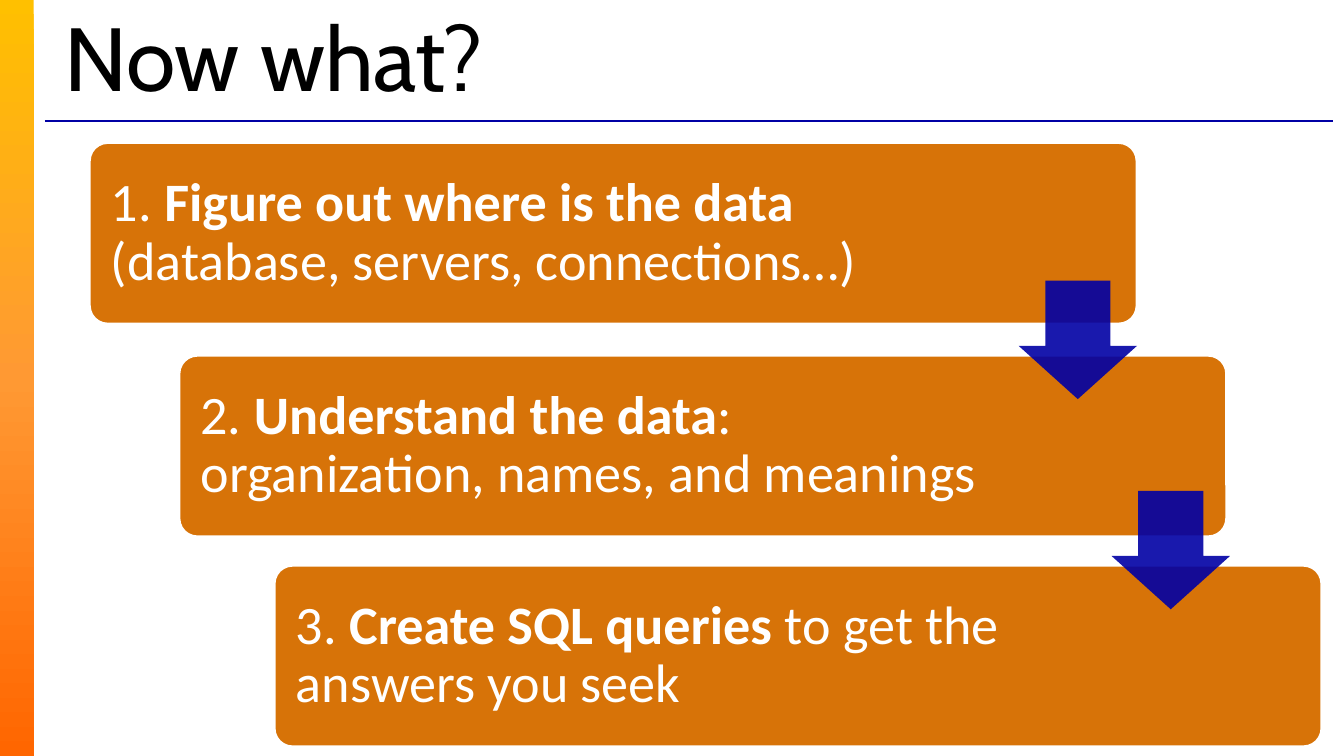
"""Build the "Now what?" slide with three cascading steps."""
from copy import deepcopy

from pptx import Presentation
from pptx.dml.color import RGBColor
from pptx.enum.shapes import MSO_CONNECTOR, MSO_SHAPE
from pptx.enum.text import MSO_ANCHOR, PP_ALIGN
from pptx.oxml.ns import qn
from pptx.oxml.xmlchemy import OxmlElement
from pptx.util import Pt

RECTANGLE = MSO_SHAPE.RECTANGLE
ROUNDED = MSO_SHAPE.ROUNDED_RECTANGLE
DOWN_ARROW = MSO_SHAPE.DOWN_ARROW
STRAIGHT = MSO_CONNECTOR.STRAIGHT
MIDDLE = MSO_ANCHOR.MIDDLE
LEFT = PP_ALIGN.LEFT

COLORS = {
    "step": "D77308",
    "navy": "0000A5",
    "title": "000000",
    "white": "FFFFFF",
    "band_top": "FFC000",
    "band_middle": "FF9933",
    "band_bottom": "FF6600",
}
TITLE_FORMAT = {"name": "Cabin", "size": Pt(48)}
STEP_FORMAT = {"name": "Calibri", "size": Pt(29)}
STEP_FRAME = {
    "word_wrap": True,
    "vertical_anchor": MIDDLE,
    "margin_left": Pt(8.6),
    "margin_right": Pt(120),
    "margin_top": Pt(8.6),
    "margin_bottom": Pt(8.6),
}
TITLE_FRAME = {"word_wrap": True, "vertical_anchor": MIDDLE}

STEP_SIZE = (561, 97)
ARROW_SIZE = (63.4, 63.4)
STEPS = [
    (48, 76.5, "1. ", "Figure out where is the data", "\n(database, servers, connections…)"),
    (96, 190.5, "2. ", "Understand the data", ": organization, names, and meanings"),
    (147, 303, "3. ", "Create SQL queries", " to get the answers you seek"),
]
ARROWS = [(545.7, 150.4), (595.5, 263)]


def rgb(color):
    """Return the named colour."""
    return RGBColor.from_string(COLORS[color])


def apply_format(target, values):
    """Set every attribute in values on target."""
    for attribute, value in values.items():
        setattr(target, attribute, value)


def add_run(paragraph, text, values, color, bold=False):
    """Append one formatted run to a paragraph."""
    run = paragraph.add_run()
    run.text = text
    apply_format(run.font, {**values, "bold": bold})
    run.font.color.rgb = rgb(color)


def add_block(slide, preset, position, size, adjustments=()):
    """Add a preset shape without shadow or outline."""
    block = slide.shapes.add_shape(preset, *map(Pt, position + size))
    block.shadow.inherit = False
    block.line.fill.background()
    for index, value in enumerate(adjustments):
        block.adjustments[index] = value
    return block


def add_band(slide):
    """Add the gradient band along the left edge."""
    fill = add_block(slide, RECTANGLE, (0, 0), (18, 405)).fill
    fill.gradient()
    fill.gradient_angle = 270
    first_stop = next(slide.shapes[-1].element.iter(qn("a:gs")))
    first_stop.addnext(deepcopy(first_stop))
    colors = ("band_top", "band_middle", "band_bottom")
    for index, (stop, color) in enumerate(zip(fill.gradient_stops, colors)):
        stop.position = index / 2
        stop.color.rgb = rgb(color)


def add_rule(slide):
    """Add the thin rule below the title."""
    rule = slide.shapes.add_connector(STRAIGHT, Pt(24), Pt(64.8), Pt(714), Pt(64.8))
    rule.line.color.rgb = rgb("navy")
    rule.line.width = Pt(0.75)
    rule.element.spPr.append(OxmlElement("a:effectLst"))


def add_title(slide, text):
    """Add the slide title."""
    title = slide.shapes.add_textbox(Pt(27.4), Pt(10.8), Pt(690), Pt(38.2))
    apply_format(title.text_frame, TITLE_FRAME)
    add_run(title.text_frame.paragraphs[0], text, TITLE_FORMAT, "title")


def add_step(slide, left, top, number, action, detail):
    """Add one step box with its action in bold."""
    step = add_block(slide, ROUNDED, (left, top), STEP_SIZE, (0.1,))
    step.fill.solid()
    step.fill.fore_color.rgb = rgb("step")
    step.line.color.rgb = rgb("white")
    step.line.width = Pt(1.25)
    apply_format(step.text_frame, STEP_FRAME)
    paragraph = step.text_frame.paragraphs[0]
    apply_format(paragraph, {"alignment": LEFT, "line_spacing": 0.9})
    add_run(paragraph, number, STEP_FORMAT, "white")
    add_run(paragraph, action, STEP_FORMAT, "white", bold=True)
    if detail.startswith("\n"):
        paragraph.add_line_break()
    add_run(paragraph, detail.lstrip("\n"), STEP_FORMAT, "white")


def add_arrow(slide, position):
    """Add a slightly transparent arrow leading to the next step."""
    arrow = add_block(slide, DOWN_ARROW, position, ARROW_SIZE, (0.55, 0.45))
    arrow.fill.solid()
    arrow.fill.fore_color.rgb = rgb("navy")
    alpha = OxmlElement("a:alpha")
    alpha.set("val", "90000")
    next(arrow.element.spPr.iter(qn("a:srgbClr"))).append(alpha)


def main():
    """Build and save the slide."""
    presentation = Presentation()
    apply_format(presentation, {"slide_width": Pt(720), "slide_height": Pt(405)})
    slide = presentation.slides.add_slide(presentation.slide_layouts[6])
    add_band(slide)
    add_rule(slide)
    add_title(slide, "Now what?")
    for step in STEPS:
        add_step(slide, *step)
    for position in ARROWS:
        add_arrow(slide, position)
    presentation.save("out.pptx")


if __name__ == "__main__":
    main()
